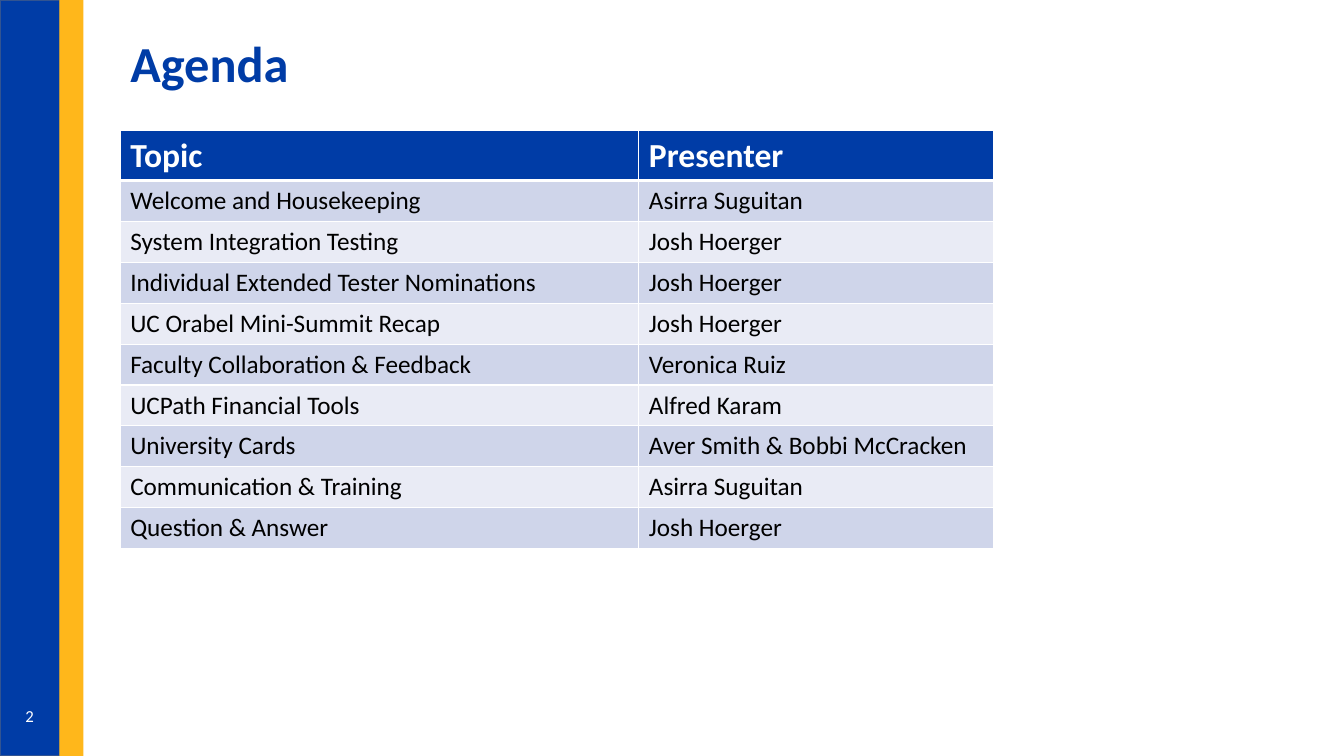
from dataclasses import dataclass
from lxml import etree
from pptx import Presentation, util as u
from pptx.dml.color import RGBColor
from pptx.enum import shapes, text
from pptx.oxml.ns import qn


@dataclass(frozen=True)
class Theme:
    face: str = "Calibri"
    blue: str = "003CA6"
    gold: str = "FFB71B"
    edge: str = "325491"
    white: str = "FFFFFF"
    black: str = "000000"
    bands: tuple = ("CFD5EA", "E9EBF5")
    title: int = 36
    head: int = 24
    body: int = 18
    small: int = 12


class Page:
    def __init__(self, slide, theme):
        self.slide = slide
        self.theme = theme

    def box(self, *dims):
        return [u.Cm(size) for size in dims]

    def words(self, frame, words, size, color, bold=False, **form):
        frame.text = words
        para = frame.paragraphs[0]
        for key, value in form.items():
            setattr(para, key, value)
        font = para.runs[0].font
        look = dict(name=self.theme.face, size=u.Pt(size), bold=bold)
        for key, value in look.items():
            setattr(font, key, value)
        font.color.rgb = RGBColor.from_string(color)

    def bar(self, left, width, color, edge=None):
        bar = self.slide.shapes.add_shape(
            shapes.MSO_SHAPE.RECTANGLE, *self.box(left, 0, width, 19.05))
        bar.shadow.inherit = False
        bar.fill.solid()
        bar.fill.fore_color.rgb = RGBColor.from_string(color)
        if edge:
            bar.line.color.rgb = RGBColor.from_string(edge)
            bar.line.width = u.Pt(1)
        else:
            bar.line.fill.background()

    def title(self, words, *dims):
        title = self.slide.shapes.title
        spots = zip(("left", "top", "width", "height"), self.box(*dims))
        for key, value in spots:
            setattr(title, key, value)
        title.text_frame.vertical_anchor = text.MSO_ANCHOR.MIDDLE
        self.words(title.text_frame, words, self.theme.title, self.theme.blue,
                   True, alignment=text.PP_ALIGN.LEFT, line_spacing=0.9)

    def label(self, words, *dims):
        frame = self.slide.shapes.add_textbox(*self.box(*dims)).text_frame
        frame.word_wrap = True
        frame.vertical_anchor = text.MSO_ANCHOR.MIDDLE
        self.words(frame, words, self.theme.small, self.theme.white,
                   alignment=text.PP_ALIGN.CENTER)

    def border(self, cell, base):
        props = cell._tc.get_or_add_tcPr()
        for side, width in dict(lnL=1, lnR=1, lnT=1, lnB=base).items():
            line = etree.SubElement(props, qn("a:" + side), w=str(u.Pt(width)))
            fill = etree.SubElement(line, qn("a:solidFill"))
            etree.SubElement(fill, qn("a:srgbClr"), val=self.theme.white)

    def table(self, rows, left, top, widths, heights):
        look = self.theme
        table = self.slide.shapes.add_table(
            len(rows), len(widths),
            *self.box(left, top, sum(widths), sum(heights))).table
        for col, width in zip(table.columns, widths):
            col.width = u.Cm(width)
        for i, (row, height) in enumerate(zip(rows, heights)):
            table.rows[i].height = u.Cm(height)
            for j, words in enumerate(row):
                cell = table.cell(i, j)
                self.border(cell, 1 if i else 3)
                cell.fill.solid()
                shade = look.bands[(i - 1) % 2] if i else look.blue
                cell.fill.fore_color.rgb = RGBColor.from_string(shade)
                if i:
                    cell.vertical_anchor = text.MSO_ANCHOR.MIDDLE
                    self.words(cell.text_frame, words, look.body, look.black)
                else:
                    self.words(cell.text_frame, words, look.head, look.white,
                               True)


AGENDA = [
    ("Topic", "Presenter"),
    ("Welcome and Housekeeping", "Asirra Suguitan"),
    ("System Integration Testing", "Josh Hoerger"),
    ("Individual Extended Tester Nominations", "Josh Hoerger"),
    ("UC Orabel Mini-Summit Recap", "Josh Hoerger"),
    ("Faculty Collaboration & Feedback", "Veronica Ruiz"),
    ("UCPath Financial Tools", "Alfred Karam"),
    ("University Cards", "Aver Smith & Bobbi McCracken"),
    ("Communication & Training", "Asirra Suguitan"),
    ("Question & Answer", "Josh Hoerger"),
]


def main():
    deck = Presentation()
    deck.slide_width, deck.slide_height = u.Cm(33.87), u.Cm(19.05)
    theme = Theme()
    page = Page(deck.slides.add_slide(deck.slide_layouts[5]), theme)
    page.bar(0, 1.5, theme.blue, theme.edge)
    page.bar(1.5, 0.6, theme.gold)
    page.title("Agenda", 3.03, 0.9, 27.84, 1.55)
    page.label("2", 0, 17.4, 1.5, 1.27)
    heights = [1.27] + [1.03] * (len(AGENDA) - 1)
    page.table(AGENDA, 3.03, 3.28, (13.07, 8.93), heights)
    deck.save("out.pptx")


if __name__ == "__main__":
    main()
